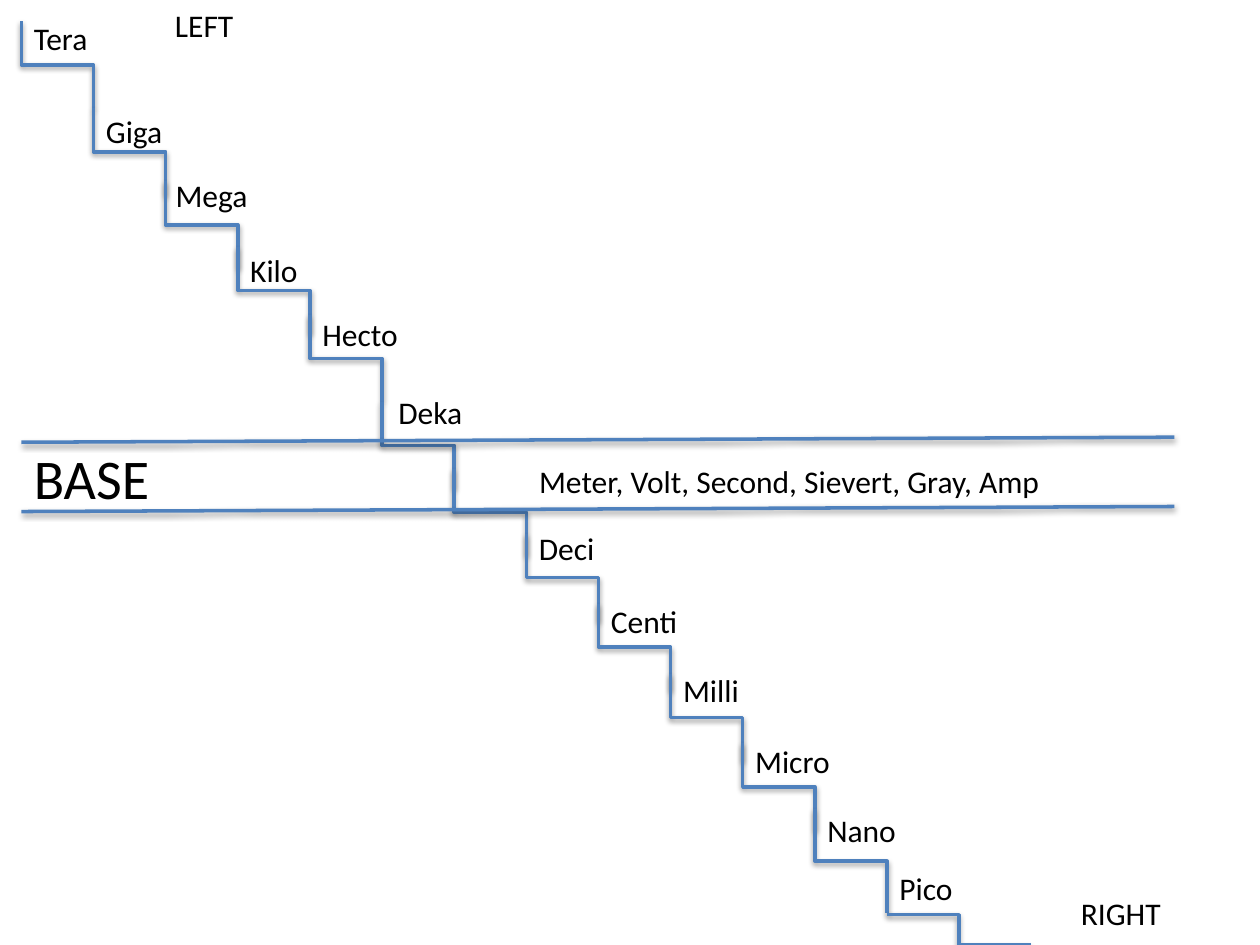
from pptx import Presentation
from pptx.dml.color import RGBColor
from pptx.enum.shapes import MSO_CONNECTOR
from pptx.enum.text import MSO_AUTO_SIZE
from pptx.util import Inches, Pt

ELBOW, STRAIGHT = MSO_CONNECTOR.ELBOW, MSO_CONNECTOR.STRAIGHT
FIT_SHAPE = MSO_AUTO_SIZE.SHAPE_TO_FIT_TEXT
BLUE, BLACK = "4F81BD", "000000"
FONT = "Calibri"

STAIR_LEFT = 0.17
TREAD = 6.87 / 12
LABEL_HEIGHT = 0.4

# prefix, label top, label width, stair top, stair drop
STAIRS = [
    ("Tera", 0.1, 0.78, 0.17, 0.69),
    ("Giga", 0.84, 0.66, 0.86, 0.69),
    ("Mega", 1.35, 0.78, 1.44, 0.69),
    ("Kilo", 1.94, 0.58, 1.96, 0.69),
    ("Hecto", 2.45, 0.81, 2.5, 0.69),
    ("Deka", 3.07, 0.72, 3.19, 0.69),
    (None, None, None, 3.72, 0.69),
    ("Deci", 4.15, 0.65, 4.24, 0.69),
    ("Centi", 4.73, 0.74, 4.79, 0.69),
    ("Milli", 5.28, 0.65, 5.35, 0.69),
    ("Micro", 5.84, 0.8, 5.9, 0.69),
    ("Nano", 6.39, 0.75, 6.42, 0.83),
]
LABEL_NUDGES = {"Mega": -0.02, "Deka": 0.03}
LAST_PREFIX = ("Pico", 7.04, 6.85, 0.63)
LAST_STAIR = (7.04, 7.26, 8.18, 7.5)
BASE_LINES = [(0.17, 3.51, 9.32, 3.47), (0.17, 4.06, 9.32, 4.02)]
# text, left, top, width
NOTES = [
    ("LEFT", 1.29, 0, 0.68),
    ("RIGHT", 8.48, 7.05, 0.85),
    ("Meter, Volt, Second, Sievert, Gray, Amp", 4.18, 3.62, 4.28),
]


def color(hex_string):
    return RGBColor.from_string(hex_string)


def add_line(slide, kind, *ends):
    line = slide.shapes.add_connector(kind, *(Inches(end) for end in ends))
    line.line.color.rgb = color(BLUE)
    line.line.width = Pt(2)
    return line


def add_stair(slide, left, top, drop):
    """Draw a down-across-down elbow: a mirrored connector turned by 270 degrees."""
    center_x, center_y = left + TREAD / 2, top + drop / 2
    stair = add_line(slide, ELBOW,
                     center_x + drop / 2, center_y - TREAD / 2,
                     center_x - drop / 2, center_y + TREAD / 2)
    stair.element.spPr.xfrm.set("rot", str(270 * 60000))


def add_label(slide, text, left, top, width, height=LABEL_HEIGHT, size=18, wrap=False):
    label = slide.shapes.add_textbox(
        Inches(left), Inches(top), Inches(width), Inches(height))
    frame = label.text_frame
    frame.word_wrap = wrap
    frame.auto_size = FIT_SHAPE
    paragraph = frame.paragraphs[0]
    paragraph.text = text
    paragraph.font.name = FONT
    paragraph.font.size = Pt(size)
    paragraph.font.color.rgb = color(BLACK)


def main():
    deck = Presentation()
    deck.slide_width, deck.slide_height = Inches(10), Inches(7.5)
    slide = deck.slides.add_slide(deck.slide_layouts[6])

    for index, (prefix, label_top, label_width, top, drop) in enumerate(STAIRS):
        left = STAIR_LEFT + index * TREAD
        add_stair(slide, left, top, drop)
        if prefix:
            add_label(slide, prefix, left + LABEL_NUDGES.get(prefix, 0),
                      label_top, label_width)
    add_line(slide, ELBOW, *LAST_STAIR)
    add_label(slide, *LAST_PREFIX)

    for ends in BASE_LINES:
        add_line(slide, STRAIGHT, *ends)
    add_label(slide, "BASE", 0.17, 3.47, 1.4, height=0.64, size=32, wrap=True)
    for note in NOTES:
        add_label(slide, *note)

    deck.save("out.pptx")


if __name__ == "__main__":
    main()
